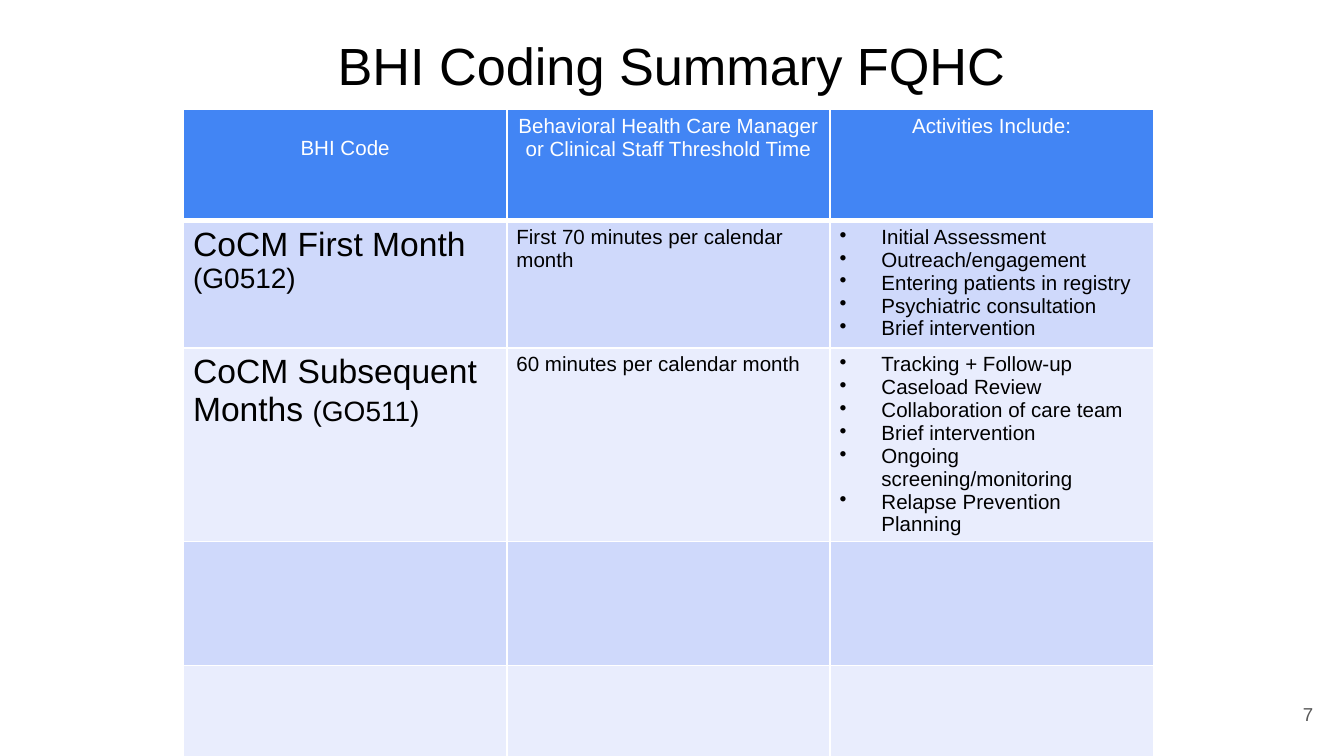
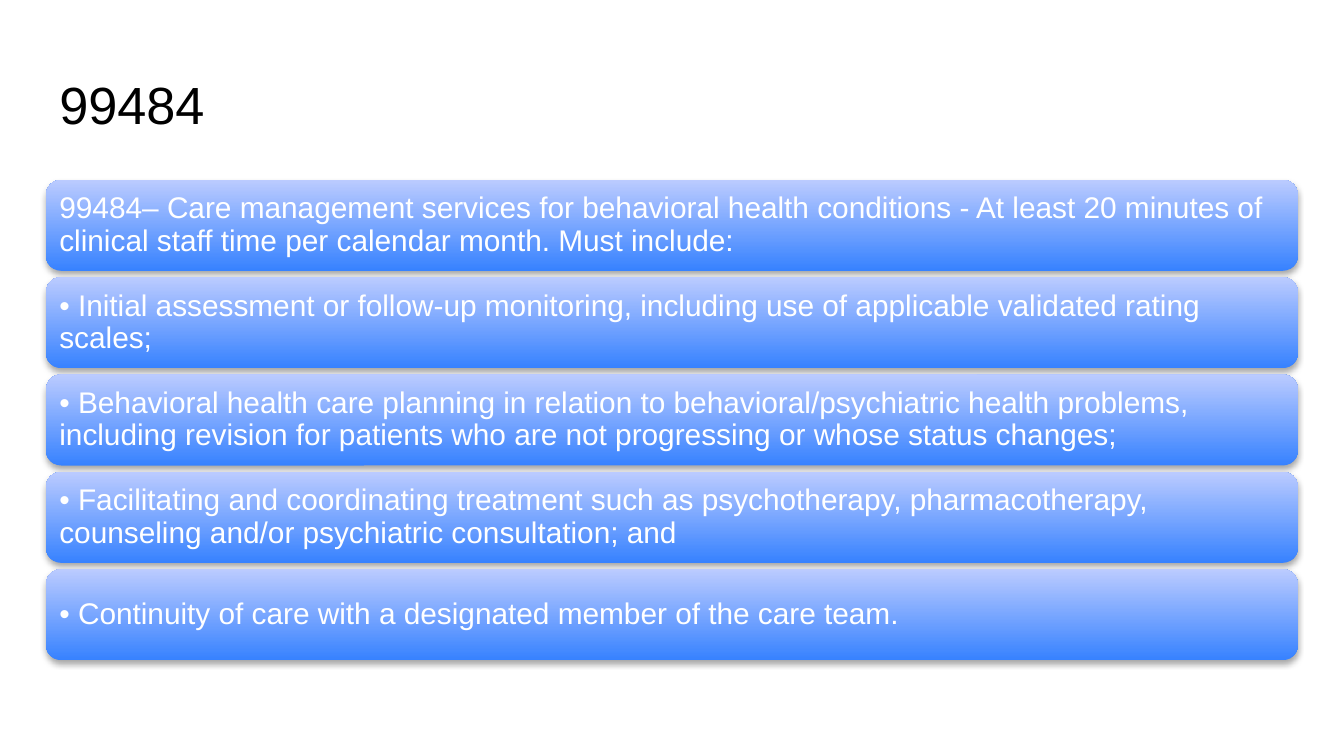
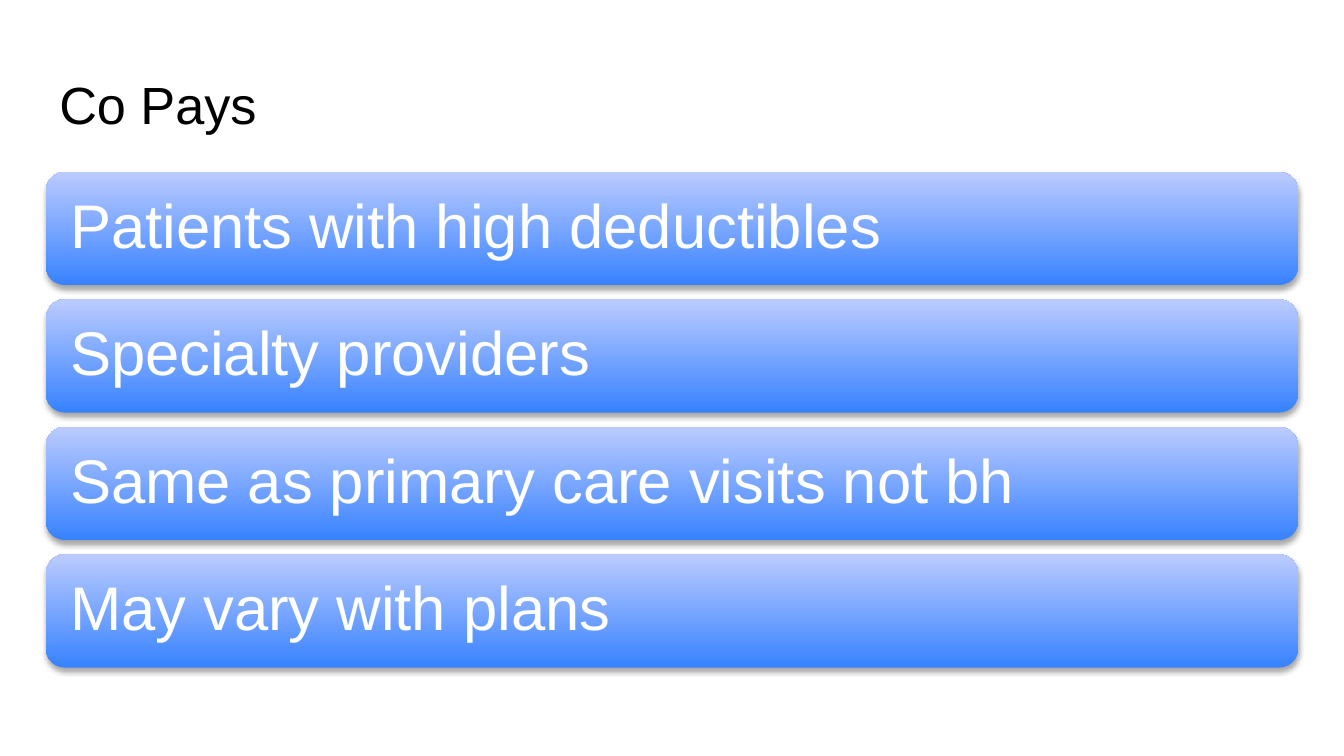
from lxml import etree
from pptx import Presentation
from pptx.dml.color import RGBColor
from pptx.enum import shapes, text
from pptx.oxml import ns
from pptx.util import Cm, Pt

FONT = "Arial"
COLORS = {
    "black": "000000",
    "white": "FFFFFF",
    "gray": "595959",
    "header": "4285F4",
    "band_dark": "CFD9FB",
    "band_light": "E9EDFD",
    "banner_bottom": "3782FF",
    "banner_top": "BBCBFF",
}
TITLE_ONLY = 5
MARGIN, CONTENT_WIDTH = 0.87, 23.66
TITLE_BOX = (MARGIN, 1.24, CONTENT_WIDTH, 1.6)

HEADERS = [
    "BHI Code",
    "Behavioral Health Care Manager or Clinical Staff Threshold Time",
    "Activities Include:",
]
FIRST_MONTH = [
    "Initial Assessment",
    "Outreach/engagement",
    "Entering patients in registry",
    "Psychiatric consultation",
    "Brief intervention",
]
LATER_MONTHS = [
    "Tracking + Follow-up",
    "Caseload Review",
    "Collaboration of care team",
    "Brief intervention",
    "Ongoing screening/monitoring",
    "Relapse Prevention Planning",
]
CARE_MANAGEMENT = [
    "99484– Care management services for behavioral health conditions - "
    "At least 20 minutes of clinical staff time per calendar month. Must include:",
    "• Initial assessment or follow-up monitoring, including use of applicable "
    "validated rating scales;",
    "• Behavioral health care planning in relation to behavioral/psychiatric health "
    "problems, including revision for patients who are not progressing or whose "
    "status changes;",
    "• Facilitating and coordinating treatment such as psychotherapy, "
    "pharmacotherapy, counseling and/or psychiatric consultation; and",
    "• Continuity of care with a designated member of the care team.",
]
CO_PAYS = [
    "Patients with high deductibles",
    "Specialty providers",
    "Same as primary care visits not bh",
    "May vary with plans",
]


def rgb(name):
    return RGBColor.from_string(COLORS[name])


def add_xml(parent, tag, **attrs):
    return etree.SubElement(parent, ns.qn(tag), attrs)


def add_xml_color(parent, name):
    return add_xml(parent, "a:srgbClr", val=COLORS[name])


def format_run(r, size, color):
    r.font.name = FONT
    r.font.size = Pt(size)
    r.font.bold = False
    r.font.color.rgb = rgb(color)


def format_paragraph(p, size, color, align=text.PP_ALIGN.LEFT):
    p.alignment = align
    for r in p.runs:
        format_run(r, size, color)


def set_insets(obj, x, y):
    """Set the inner margins, in cm, of a text frame or a table cell."""
    obj.margin_left = obj.margin_right = Cm(x)
    obj.margin_top = obj.margin_bottom = Cm(y)


def add_titled_slide(prs, title, box=TITLE_BOX, align=text.PP_ALIGN.LEFT, spacing=0.9):
    slide = prs.slides.add_slide(prs.slide_layouts[TITLE_ONLY])
    sp = slide.shapes.title
    sp.left, sp.top, sp.width, sp.height = map(Cm, box)
    tf = sp.text_frame
    tf.text = title
    tf.auto_size = text.MSO_AUTO_SIZE.NONE
    tf.vertical_anchor = text.MSO_ANCHOR.TOP
    set_insets(tf, 0.25, 0.25)
    p = tf.paragraphs[0]
    p.line_spacing = spacing
    format_paragraph(p, 28, "black", align)
    return slide


def add_page_number(slide, number):
    sp = slide.shapes.add_textbox(Cm(23.55), Cm(12.95), Cm(1.52), Cm(1.09))
    tf = sp.text_frame
    tf.text = str(number)
    tf.word_wrap = True
    tf.vertical_anchor = text.MSO_ANCHOR.MIDDLE
    set_insets(tf, 0.25, 0.25)
    format_paragraph(tf.paragraphs[0], 10, "gray", text.PP_ALIGN.RIGHT)


def add_borders(cell, bottom_width):
    tc_pr = cell._tc.get_or_add_tcPr()
    for i, side in enumerate("LRTB"):
        width = bottom_width if side == "B" else 1
        ln = etree.Element(ns.qn(f"a:ln{side}"), w=str(Pt(width)))
        add_xml_color(add_xml(ln, "a:solidFill"), "white")
        tc_pr.insert(i, ln)


def style_cell(cell, fill, bottom_width=1):
    cell.fill.solid()
    cell.fill.fore_color.rgb = rgb(fill)
    set_insets(cell, 0.18, 0.1)
    add_borders(cell, bottom_width)


def fill_bullets(cell, items):
    cell.text = "\n".join(items)
    for p in cell.text_frame.paragraphs:
        format_paragraph(p, 11, "black")
        p_pr = p._p.get_or_add_pPr()
        p_pr.set("marL", str(Cm(0.79)))
        p_pr.set("indent", str(-Cm(0.79)))
        add_xml_color(add_xml(p_pr, "a:buClr"), "black")
        add_xml(p_pr, "a:buChar", char="•")


def fill_code(cell, *lines):
    """Write each line as a list of (words, size) runs."""
    tf = cell.text_frame
    for i, line in enumerate(lines):
        p = tf.add_paragraph() if i else tf.paragraphs[0]
        for words, size in line:
            r = p.add_run()
            r.text = words
            format_run(r, size, "black")


def add_coding_table(slide):
    heights = [2.1, 2.41, 2.84, 2.34, 2.36]
    frame = slide.shapes.add_table(
        len(heights), len(HEADERS), Cm(3.47), Cm(2.07), Cm(18.33), Cm(sum(heights)))
    table = frame.table
    for row, height in zip(table.rows, heights):
        row.height = Cm(height)
    for cell, header in zip(table.rows[0].cells, HEADERS):
        style_cell(cell, "header", 3)
        cell.text = header
        format_paragraph(cell.text_frame.paragraphs[0], 11, "white", text.PP_ALIGN.CENTER)
    table.cell(0, 0).margin_top = Cm(0.52)
    for i in range(1, len(heights)):
        for cell in table.rows[i].cells:
            style_cell(cell, "band_dark" if i % 2 else "band_light")

    fill_code(table.cell(1, 0), [("CoCM First Month", 18)], [("(G0512)", 15)])
    fill_code(table.cell(2, 0), [("CoCM Subsequent Months ", 18), ("(GO511)", 15)])
    fill_code(table.cell(1, 1), [("First 70 minutes per calendar month", 11)])
    fill_code(table.cell(2, 1), [("60 minutes per calendar month", 11)])
    fill_bullets(table.cell(1, 2), FIRST_MONTH)
    fill_bullets(table.cell(2, 2), LATER_MONTHS)


def add_soft_shadow(sp):
    sp.shadow.inherit = False
    effects = sp._element.spPr.find(ns.qn("a:effectLst"))
    shadow = add_xml(effects, "a:outerShdw", blurRad=str(Pt(3.1)), dist=str(Pt(1.8)),
                     dir="5400000", rotWithShape="0")
    add_xml(add_xml_color(shadow, "black"), "a:alpha", val="35000")


def add_banner(slide, words, top, height, size, inset):
    sp = slide.shapes.add_shape(shapes.MSO_SHAPE.ROUNDED_RECTANGLE, Cm(MARGIN), Cm(top),
                                Cm(CONTENT_WIDTH), Cm(height))
    sp.fill.gradient()
    sp.fill.gradient_angle = 90
    for stop, color in zip(sp.fill.gradient_stops, ("banner_bottom", "banner_top")):
        stop.color.rgb = rgb(color)
    sp.line.fill.background()
    add_soft_shadow(sp)
    tf = sp.text_frame
    tf.text = words
    tf.word_wrap = True
    tf.vertical_anchor = text.MSO_ANCHOR.MIDDLE
    set_insets(tf, inset, inset)
    p = tf.paragraphs[0]
    p.line_spacing = 0.9
    format_paragraph(p, size, "white")


def add_banner_stack(slide, items, top, height, gap, size, inset):
    for i, words in enumerate(items):
        add_banner(slide, words, top + i * (height + gap), height, size, inset)


def main():
    prs = Presentation()
    prs.slide_width, prs.slide_height = Cm(25.4), Cm(14.29)

    slide = add_titled_slide(prs, "BHI Coding Summary FQHC", (4.11, 0.38, 17.15, 2.06),
                             text.PP_ALIGN.CENTER, 1.0)
    add_coding_table(slide)
    add_page_number(slide, 7)

    slide = add_titled_slide(prs, "99484")
    add_banner_stack(slide, CARE_MANAGEMENT, top=3.4, height=1.72, gap=0.12,
                     size=16, inset=0.17)

    slide = add_titled_slide(prs, "Co Pays")
    add_banner_stack(slide, CO_PAYS, top=3.25, height=2.14, gap=0.27, size=33, inset=0.35)

    prs.save("out.pptx")


if __name__ == "__main__":
    main()
